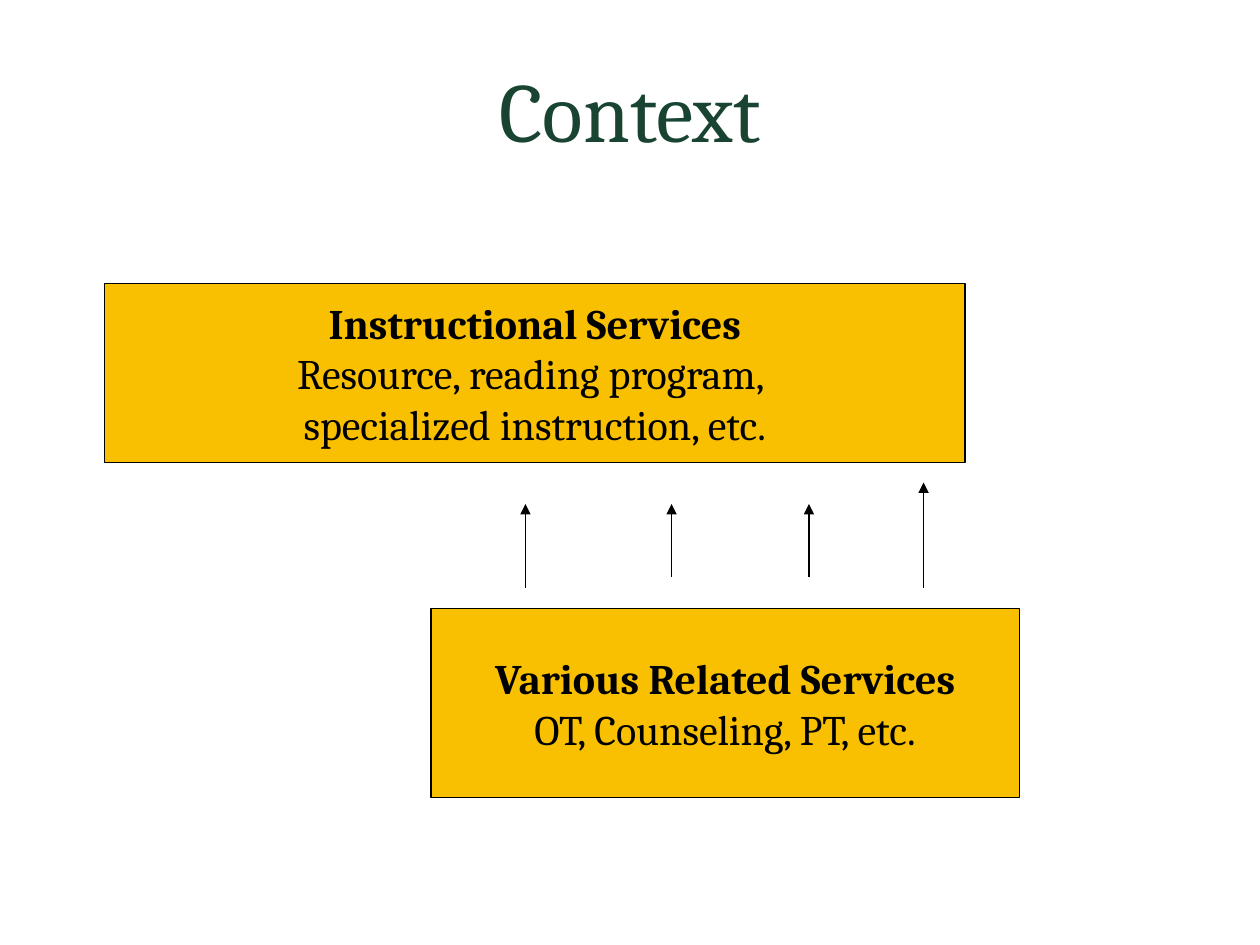
"""Build the Context slide: two service boxes joined by rising arrows."""
from typing import Any, NamedTuple

from pptx import Presentation
from pptx.dml.color import RGBColor
from pptx.enum.shapes import MSO_CONNECTOR as Link, MSO_SHAPE as Shape
from pptx.enum.text import MSO_ANCHOR as Anchor, PP_ALIGN as Align
from pptx.oxml.ns import qn
from pptx.slide import Slide
from pptx.text.text import Font
from pptx.util import Inches, Pt
from lxml.etree import SubElement

GREEN = RGBColor(0x19, 0x44, 0x31)
GOLD = RGBColor(0xF8, 0xC0, 0x00)
BLACK = RGBColor(0, 0, 0)
FACE = "Cambria"


class Box(NamedTuple):
    left: float
    top: float
    width: float
    height: float
    lines: tuple[str, ...]


class Arrow(NamedTuple):
    x: float
    start: float
    end: float


BOXES = (
    Box(0.83, 2.25, 6.83, 1.42, (
        "Instructional Services",
        "Resource, reading program, ",
        "specialized instruction, etc.",
    )),
    Box(3.42, 4.83, 4.67, 1.5, (
        "Various Related Services",
        "OT, Counseling, PT, etc.",
    )),
)
ARROWS = (
    Arrow(5.33, 4.58, 4),
    Arrow(6.42, 4.58, 4),
    Arrow(7.33, 4.67, 3.83),
    Arrow(4.17, 4.67, 4),
)


def style(item: Any, values: dict[str, Any]) -> None:
    for name, value in values.items():
        setattr(item, name, value)


def ink(font: Font, size: int, color: RGBColor, bold: bool = False) -> None:
    style(font, {"name": FACE, "size": Pt(size), "bold": bold})
    font.color.rgb = color


def stroke(line: Any) -> None:
    line.color.rgb = BLACK
    line.width = Pt(0.75)


def add_title(slide: Slide, text: str) -> None:
    title = slide.shapes.title
    style(title, {"left": Inches(0.84), "top": Inches(0.09),
                  "width": Inches(8.32), "height": Inches(1.55)})
    frame = title.text_frame
    frame.text = text
    frame.vertical_anchor = Anchor.MIDDLE
    para = frame.paragraphs[0]
    para.alignment = Align.CENTER
    ink(para.runs[0].font, 48, GREEN)


def add_box(slide: Slide, box: Box) -> None:
    shape = slide.shapes.add_shape(
        Shape.RECTANGLE, *(Inches(side) for side in box[:4]))
    shape.shadow.inherit = False
    shape.fill.solid()
    shape.fill.fore_color.rgb = GOLD
    stroke(shape.line)
    frame = shape.text_frame
    style(frame, {"word_wrap": False, "vertical_anchor": Anchor.MIDDLE})
    for row, text in enumerate(box.lines):
        para = frame.add_paragraph() if row else frame.paragraphs[0]
        para.alignment = Align.CENTER
        run = para.add_run()
        run.text = text
        ink(run.font, 24, BLACK, bold=row == 0)


def add_arrow(slide: Slide, arrow: Arrow) -> None:
    x = Inches(arrow.x)
    link = slide.shapes.add_connector(
        Link.STRAIGHT, x, Inches(arrow.start), x, Inches(arrow.end))
    stroke(link.line)
    props = link._element.spPr
    SubElement(props.find(qn("a:ln")), qn("a:tailEnd"), type="triangle")
    SubElement(props, qn("a:effectLst"))


def main() -> None:
    deck = Presentation()
    style(deck, {"slide_width": Inches(10), "slide_height": Inches(7.5)})
    slide = deck.slides.add_slide(deck.slide_layouts[5])
    add_title(slide, "Context")
    for box in BOXES:
        add_box(slide, box)
    for arrow in ARROWS:
        add_arrow(slide, arrow)
    deck.save("out.pptx")


if __name__ == "__main__":
    main()
